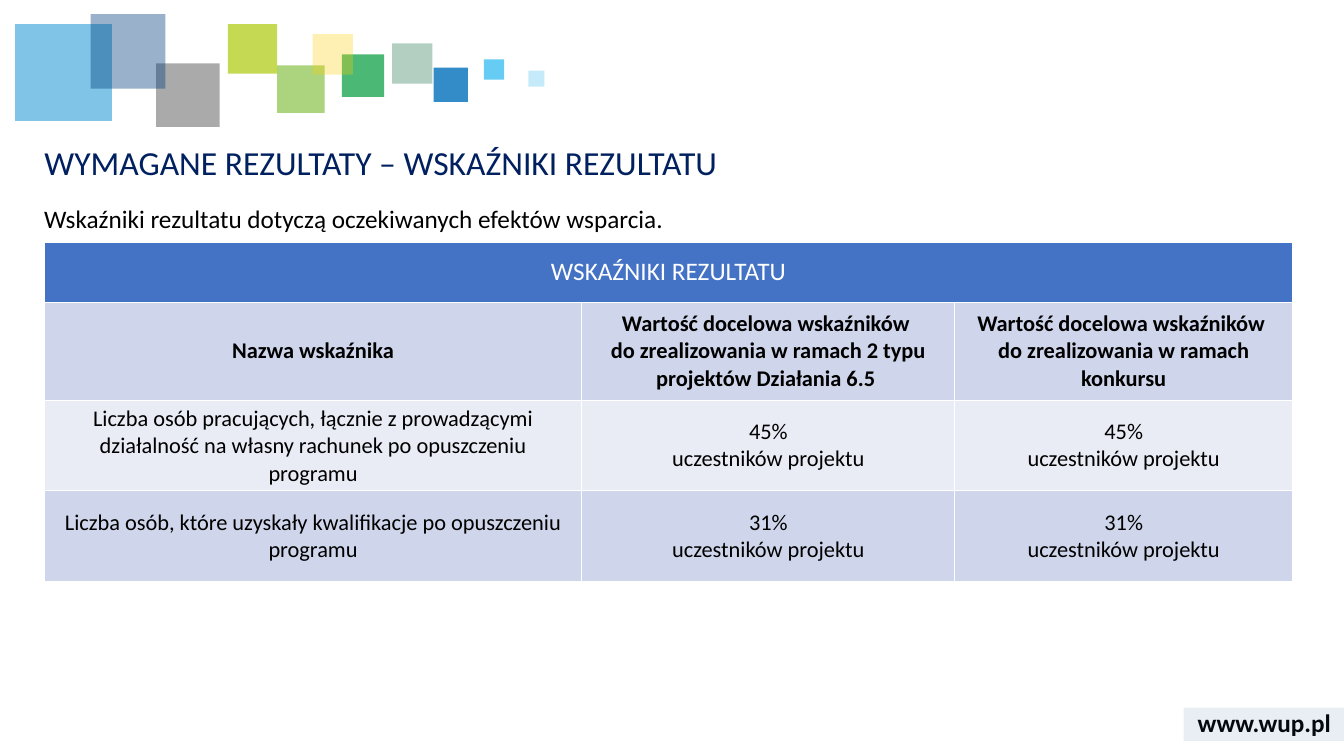
import lxml.etree
import pptx
import pptx.dml.color
import pptx.enum.shapes
import pptx.enum.text
import pptx.oxml.ns
import pptx.util

RGBColor = pptx.dml.color.RGBColor
Inches = pptx.util.Inches
Pt = pptx.util.Pt
PP_ALIGN = pptx.enum.text.PP_ALIGN
ANCHOR = pptx.enum.text.MSO_ANCHOR
RECT = pptx.enum.shapes.MSO_SHAPE.RECTANGLE
qn = pptx.oxml.ns.qn

NAVY = RGBColor(0x00, 0x20, 0x60)
BLACK = RGBColor(0x00, 0x00, 0x00)
WHITE = RGBColor(0xFF, 0xFF, 0xFF)
BLUE = RGBColor(0x44, 0x72, 0xC4)
PALE = RGBColor(0xCF, 0xD5, 0xEA)
LIGHT = RGBColor(0xE9, 0xEB, 0xF5)
STEEL = RGBColor(0x2F, 0x55, 0x97)
PINE = RGBColor(0x00, 0x61, 0x38)
AZURE = RGBColor(0x00, 0x6E, 0xB9)
GREEN = RGBColor(0x00, 0x9A, 0x3C)
SKY = RGBColor(0x02, 0x8B, 0xD3)
LEAF = RGBColor(0x75, 0xB8, 0x2A)
GRAY = RGBColor(0x57, 0x57, 0x57)
INDIGO = RGBColor(0x00, 0x3D, 0x7C)
CYAN = RGBColor(0x40, 0xC0, 0xF1)
LIME = RGBColor(0xAF, 0xCA, 0x0B)
YELLOW = RGBColor(0xFE, 0xD0, 0x00)

SQUARES = [
    (3.74, 0.29, 0.4, PINE, 30),
    (4.15, 0.53, 0.34, AZURE, 80),
    (3.24, 0.4, 0.42, GREEN, 70),
    (0, 0.1, 0.96, SKY, 50),
    (2.6, 0.51, 0.47, LEAF, 60),
    (1.4, 0.49, 0.63, GRAY, 50),
    (0.75, 0, 0.74, INDIGO, 40),
    (4.65, 0.45, 0.2, CYAN, 80),
    (2.11, 0.1, 0.49, LIME, 70),
    (2.95, 0.2, 0.4, YELLOW, 30),
    (5.09, 0.56, 0.16, CYAN, 30),
]
COLUMNS = [5.33, 3.7, 3.35]
HEIGHTS = [0.6, 0.97, 0.9, 0.9]
FILLS = [BLUE, PALE, LIGHT, PALE]
ROWS = [
    ["WSKAŹNIKI REZULTATU"],
    ["Nazwa wskaźnika",
     "Wartość docelowa wskaźników \vdo zrealizowania w ramach 2 typu projektów Działania 6.5 ",
     "Wartość docelowa wskaźników \vdo zrealizowania w ramach konkursu"],
    ["Liczba osób pracujących, łącznie z prowadzącymi działalność "
     "na własny rachunek po opuszczeniu programu"] + ["45%\nuczestników projektu"] * 2,
    ["Liczba osób, które uzyskały kwalifikacje po opuszczeniu programu"]
    + ["31%\nuczestników projektu"] * 2,
]


def style(frame, size, color, bold=False, align=PP_ALIGN.LEFT):
    """Format every paragraph of a text frame."""
    for para in frame.paragraphs:
        para.alignment = align
        para.font.name = "Calibri"
        para.font.size = Pt(size)
        para.font.bold = bold
        para.font.color.rgb = color


def place(shape, left, top, width, height):
    """Move and size a shape in inches."""
    shape.left, shape.top = Inches(left), Inches(top)
    shape.width, shape.height = Inches(width), Inches(height)


def add_rect(shapes, left, top, width, height, color, alpha):
    """Add a borderless, partly opaque rectangle."""
    rect = shapes.add_shape(RECT, Inches(left), Inches(top), Inches(width), Inches(height))
    rect.shadow.inherit = False
    rect.line.fill.background()
    rect.fill.solid()
    rect.fill.fore_color.rgb = color
    tone = rect.fill._xPr.find(".//" + qn("a:srgbClr"))
    lxml.etree.SubElement(tone, qn("a:alpha")).set("val", str(alpha * 1000))


def add_text(slide, text, left, top, width, height):
    """Add a wrapping text box and return its frame."""
    box = slide.shapes.add_textbox(Inches(left), Inches(top), Inches(width), Inches(height))
    frame = box.text_frame
    frame.word_wrap = True
    frame.text = text
    return frame


def add_mosaic(slide, left, top):
    """Draw the group of coloured squares."""
    group = slide.shapes.add_group_shape()
    for x, y, side, color, alpha in SQUARES:
        add_rect(group.shapes, left + x, top + y, side, side, color, alpha)


def add_badge(slide, left, top, width, height):
    """Draw the web address on its pale strip."""
    frame = add_text(slide, "www.wup.pl", left, top, width, height)
    frame.vertical_anchor = ANCHOR.MIDDLE
    style(frame, 18, BLACK, True, PP_ALIGN.CENTER)
    add_rect(slide.shapes, left, top + 0.05, width, 0.33, STEEL, 10)


def add_heading(slide, left, top, width):
    """Fill the title and the lead sentence below it."""
    title = slide.shapes.title
    place(title, left, top, width, 0.55)
    title.text_frame.text = "WYMAGANE REZULTATY – WSKAŹNIKI REZULTATU"
    title.text_frame.vertical_anchor = ANCHOR.MIDDLE
    style(title.text_frame, 24, NAVY)
    lead = add_text(slide, "Wskaźniki rezultatu dotyczą oczekiwanych efektów wsparcia.",
                    left, top + 0.64, width, 0.4)
    style(lead, 18, BLACK)
    for frame in (title.text_frame, lead):
        frame.paragraphs[0].line_spacing = 0.9


def add_border(cell):
    """Give a cell thin white borders."""
    props = cell._tc.get_or_add_tcPr()
    for side in ("a:lnL", "a:lnR", "a:lnT", "a:lnB"):
        line = lxml.etree.SubElement(props, qn(side), w=str(Pt(1)))
        fill = lxml.etree.SubElement(line, qn("a:solidFill"))
        lxml.etree.SubElement(fill, qn("a:srgbClr"), val=str(WHITE))


def add_grid(slide, left, top):
    """Build the table of result indicators."""
    frame = slide.shapes.add_table(len(ROWS), len(COLUMNS), Inches(left), Inches(top),
                                   Inches(sum(COLUMNS)), Inches(sum(HEIGHTS)))
    table = frame.table
    for column, width in zip(table.columns, COLUMNS):
        column.width = Inches(width)
    for row, height in zip(table.rows, HEIGHTS):
        row.height = Inches(height)
    table.cell(0, 0).merge(table.cell(0, len(COLUMNS) - 1))
    for r, texts in enumerate(ROWS):
        for cell in table.rows[r].cells:
            add_border(cell)
            cell.fill.solid()
            cell.fill.fore_color.rgb = FILLS[r]
        for c, text in enumerate(texts):
            cell = table.cell(r, c)
            cell.text_frame.text = text
            cell.vertical_anchor = ANCHOR.MIDDLE
            size, color = (16, BLACK) if r else (18, WHITE)
            style(cell.text_frame, size, color, r == 1, PP_ALIGN.CENTER)


def main():
    """Build the slide and save it."""
    deck = pptx.Presentation()
    deck.slide_width, deck.slide_height = Inches(13.33), Inches(7.5)
    slide = deck.slides.add_slide(deck.slide_layouts[5])
    add_badge(slide, 11.74, 6.97, 1.6, 0.4)
    add_mosaic(slide, 0.15, 0.14)
    add_heading(slide, 0.34, 1.36, 12.41)
    add_grid(slide, 0.44, 2.4)
    deck.save("out.pptx")


if __name__ == "__main__":
    main()
